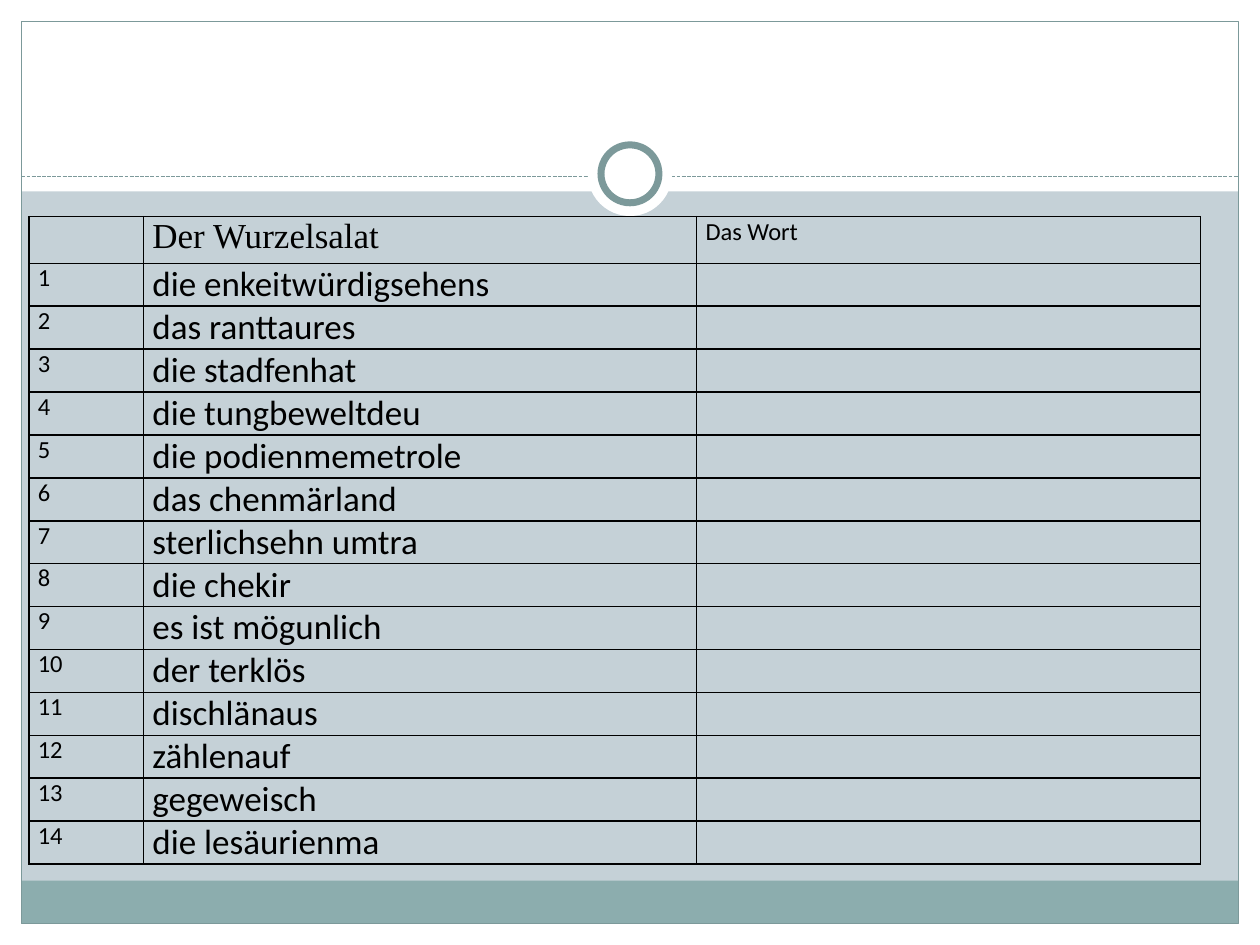
from lxml.etree import SubElement
from pptx import Presentation
from pptx.dml.color import RGBColor
from pptx.enum.dml import MSO_LINE
from pptx.enum.shapes import MSO_CONNECTOR, MSO_SHAPE
from pptx.enum.text import PP_ALIGN
from pptx.oxml import parse_xml
from pptx.oxml.ns import nsdecls, qn
from pptx.util import Inches, Pt

WHITE, BLACK, PALE, TEAL, EDGE = "FFFFFF", "000000", "C5D1D7", "8CADAE", "7C999A"
WORDS = [
    "die enkeitwürdigsehens", "das ranttaures", "die stadfenhat",
    "die tungbeweltdeu", "die podienmemetrole", "das chenmärland",
    "sterlichsehn umtra", "die chekir", "es ist mögunlich", "der terklös",
    "dischlänaus", "zählenauf", "gegeweisch", "die lesäurienma",
]


def color(value):
    return RGBColor.from_string(value)


def add_box(s, kind, box, fill=None, line=None, width=0.75):
    sp = s.shapes.add_shape(kind, *map(Inches, box))
    sp.shadow.inherit = False
    if fill:
        sp.fill.solid()
        sp.fill.fore_color.rgb = color(fill)
    else:
        sp.fill.background()
    if line:
        sp.line.color.rgb = color(line)
        sp.line.width = Pt(width)
    else:
        sp.line.fill.background()


def add_frame(s, x, y, w, h):
    m = 0.17
    right, bottom = x + w - m, y + h - m
    bands = [
        ((x, bottom, w, m), WHITE),
        ((x, y, w, 1.52), WHITE),
        ((x, y, m, h), WHITE),
        ((right, y, m, h), WHITE),
        ((x + m, bottom - 0.34, w - 2 * m, 0.34), TEAL),
    ]
    for box, fill in bands:
        add_box(s, MSO_SHAPE.RECTANGLE, box, fill)
    add_box(s, MSO_SHAPE.RECTANGLE, (x + m, y + m, w - 2 * m, h - 2 * m), line=EDGE)


def add_divider(s, x, y, w):
    rule = s.shapes.add_connector(
        MSO_CONNECTOR.STRAIGHT, *map(Inches, (x, y, x + w, y)))
    rule.line.color.rgb = color(EDGE)
    rule.line.width = Pt(0.75)
    rule.line.dash_style = MSO_LINE.SQUARE_DOT
    rule.line._ln.find(qn("a:prstDash")).set("val", "sysDash")
    SubElement(rule._element.spPr, qn("a:effectLst"))
    for size, line in ((0.67, None), (0.46, EDGE)):
        box = (x + w / 2 - size / 2, y - 0.02 - size / 2, size, size)
        add_box(s, MSO_SHAPE.OVAL, box, WHITE, line, 4)


def style_cell(cell):
    margins = {"margin_left": 0.07, "margin_right": 0.07,
               "margin_top": 0, "margin_bottom": 0}
    for name, value in margins.items():
        setattr(cell, name, Inches(value))
    cell.fill.background()
    tcPr = cell._tc.get_or_add_tcPr()
    for i, side in enumerate("LRTB"):
        tcPr.insert(i, parse_xml(
            f'<a:ln{side} {nsdecls("a")} w="12700"><a:solidFill>'
            f'<a:srgbClr val="{BLACK}"/></a:solidFill></a:ln{side}>'))


def write_cell(cell, text, size, name="Calibri", align=PP_ALIGN.JUSTIFY):
    p = cell.text_frame.paragraphs[0]
    p.alignment = align
    r = p.add_run()
    r.text = text
    for key, value in {"size": Pt(size), "name": name}.items():
        setattr(r.font, key, value)
    r.font.color.rgb = color(BLACK)


def add_word_table(s, x, y, w, h):
    table = s.shapes.add_table(
        len(WORDS) + 1, 3, *map(Inches, (x, y, w, h))).table
    table.first_row = table.horz_banding = False
    for col, width in zip(table.columns, (0.91, 4.39, w - 5.3)):
        col.width = Inches(width)
    for i, row in enumerate(table.rows):
        row.height = Inches(0.34 if i else 0.37)
    for cell in table.iter_cells():
        style_cell(cell)
    write_cell(table.cell(0, 1), "Der Wurzelsalat", 20, "Times New Roman", PP_ALIGN.LEFT)
    write_cell(table.cell(0, 2), "Das Wort", 14)
    for i, word in enumerate(WORDS, 1):
        write_cell(table.cell(i, 0), str(i), 14)
        write_cell(table.cell(i, 1), word, 20)


def main():
    prs = Presentation()
    prs.slide_width, prs.slide_height = Inches(10), Inches(7.5)
    s = prs.slides.add_slide(prs.slide_layouts[6])
    s.background.fill.solid()
    s.background.fill.fore_color.rgb = color(PALE)
    add_frame(s, 0, 0, 10, 7.5)
    add_divider(s, 0.17, 1.4, 9.66)
    add_word_table(s, 0.23, 1.72, 9.3, 5.13)
    prs.save("out.pptx")


if __name__ == "__main__":
    main()
